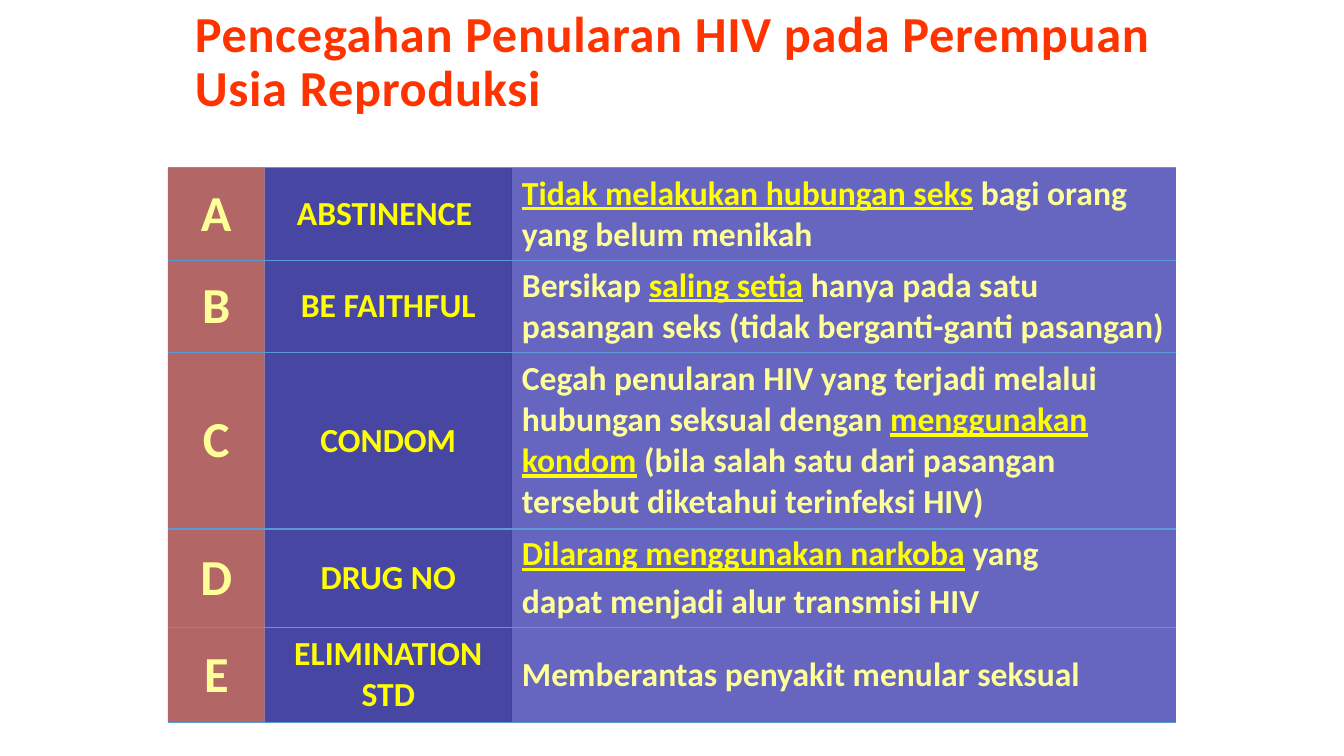
from dataclasses import dataclass

from lxml.etree import SubElement
from pptx import Presentation
from pptx.dml.color import RGBColor
from pptx.enum.text import MSO_ANCHOR, PP_ALIGN
from pptx.oxml import parse_xml
from pptx.oxml.ns import nsdecls, qn
from pptx.util import Cm, Pt


@dataclass(frozen=True)
class Theme:
    font: str = "Calibri"
    title: str = "FF3300"
    text: str = "FFFF99"
    highlight: str = "FFFF00"
    rule: str = "5B9BD5"
    letter_fill: tuple = ("800000", 60)
    keyword_fill: tuple = ("333399", 90)
    advice_fill: tuple = ("000099", 60)
    large: int = 36
    body: int = 24


THEME = Theme()
TITLE = "Pencegahan Penularan HIV pada Perempuan Usia Reproduksi"
COLUMN_WIDTHS = (2.44, 6.23, 16.73)

# Row height in cm, letter, keyword, advice paragraphs; |...| marks highlighted words
PREVENTION_STEPS = [
    (2.33, "A", "ABSTINENCE ",
     ["|Tidak melakukan hubungan seks| bagi orang yang belum menikah"]),
    (2.32, "B", "BE FAITHFUL",
     ["Bersikap |saling setia| hanya pada satu pasangan seks (tidak berganti-ganti pasangan)"]),
    (4.45, "C", "CONDOM",
     ["Cegah penularan HIV yang terjadi melalui hubungan seksual dengan "
      "|menggunakan kondom| (bila salah satu dari pasangan tersebut diketahui terinfeksi HIV)"]),
    (2.48, "D", "DRUG NO",
     ["|Dilarang menggunakan narkoba| yang", "dapat menjadi alur transmisi HIV"]),
    (2.39, "E", "ELIMINATION STD", ["Memberantas penyakit menular seksual"]),
]


def format_run(run, size, color):
    run.font.name = THEME.font
    run.font.size = Pt(size)
    run.font.bold = True
    run.font.color.rgb = RGBColor.from_string(color)


def add_title(slide, left, top, width, height):
    box = slide.shapes.add_textbox(left, top, width, height)
    frame = box.text_frame
    frame.word_wrap = True
    frame.vertical_anchor = MSO_ANCHOR.MIDDLE
    frame.text = TITLE
    heading = frame.paragraphs[0]
    heading.line_spacing = 0.9
    format_run(heading.runs[0], THEME.large, THEME.title)
    heading.runs[0].font._element.set("spc", "50")


def style_cell(cell, fill):
    """Give the cell a translucent fill and rules above and below only."""
    color, opacity = fill
    cell.vertical_anchor = MSO_ANCHOR.MIDDLE
    cell.fill.solid()
    cell.fill.fore_color.rgb = RGBColor.from_string(color)
    properties = cell._tc.get_or_add_tcPr()
    tint = properties.find(f".//{qn('a:srgbClr')}")
    SubElement(tint, qn("a:alpha")).set("val", str(opacity * 1000))
    rule = f'<a:solidFill><a:srgbClr val="{THEME.rule}"/></a:solidFill>'
    sides = (("lnL", "<a:noFill/>"), ("lnR", "<a:noFill/>"), ("lnT", rule), ("lnB", rule))
    for position, (side, paint) in enumerate(sides):
        properties.insert(position, parse_xml(
            f'<a:{side} {nsdecls("a")} w="{Pt(1)}">{paint}</a:{side}>'))


def fill_paragraph(paragraph, marked_text, size, color, align):
    paragraph.alignment = align
    spacing = SubElement(paragraph._p.get_or_add_pPr(), qn("a:spcBef"))
    SubElement(spacing, qn("a:spcPct")).set("val", "20000")
    for index, part in enumerate(marked_text.split("|")):
        if part:
            highlighted = index % 2 == 1
            run = paragraph.add_run()
            run.text = part
            format_run(run, size, THEME.highlight if highlighted else color)
            run.font.underline = highlighted


def add_prevention_table(slide, left, top, width, height):
    table = slide.shapes.add_table(
        len(PREVENTION_STEPS), len(COLUMN_WIDTHS), left, top, width, height).table
    table.first_row = table.horz_banding = False
    for column, column_width in zip(table.columns, COLUMN_WIDTHS):
        column.width = Cm(column_width)
    styles = (
        (THEME.letter_fill, THEME.large, THEME.text, PP_ALIGN.CENTER),
        (THEME.keyword_fill, THEME.body, THEME.highlight, PP_ALIGN.CENTER),
        (THEME.advice_fill, THEME.body, THEME.text, PP_ALIGN.LEFT),
    )
    for row, (row_height, letter, keyword, advice) in zip(table.rows, PREVENTION_STEPS):
        row.height = Cm(row_height)
        contents = ([letter], [keyword], advice)
        for cell, lines, (fill, size, color, align) in zip(row.cells, contents, styles):
            style_cell(cell, fill)
            frame = cell.text_frame
            for index, line in enumerate(lines):
                paragraph = frame.add_paragraph() if index else frame.paragraphs[0]
                fill_paragraph(paragraph, line, size, color, align)


def main():
    deck = Presentation()
    deck.slide_width, deck.slide_height = Cm(33.87), Cm(19.05)
    slide = deck.slides.add_slide(deck.slide_layouts[6])
    add_title(slide, Cm(4.66), Cm(0), Cm(24.98), Cm(3.18))
    add_prevention_table(slide, Cm(4.23), Cm(4.23), Cm(25.4), Cm(13.97))
    deck.save("out.pptx")


if __name__ == "__main__":
    main()
